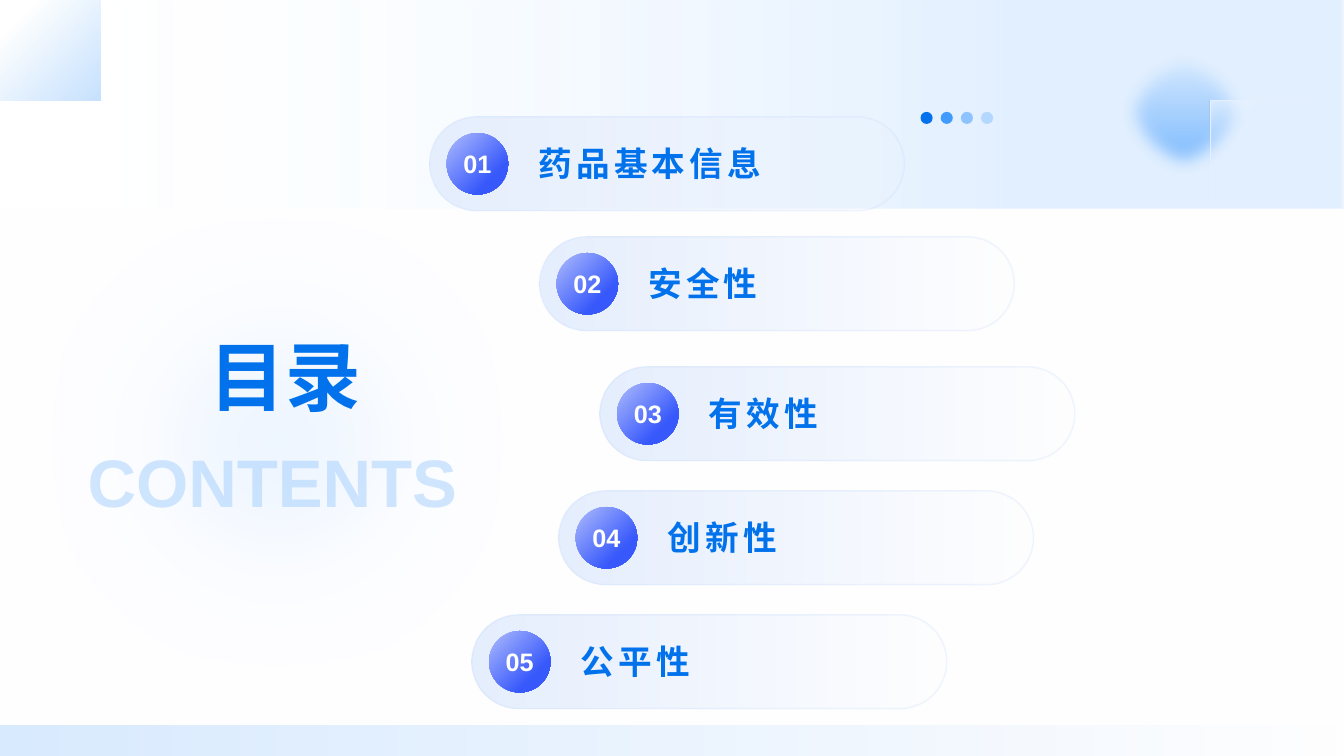
from dataclasses import dataclass

from lxml import etree
from pptx import Presentation
from pptx.dml.color import RGBColor
from pptx.enum.shapes import MSO_SHAPE
from pptx.enum.text import MSO_ANCHOR, MSO_AUTO_SIZE, PP_ALIGN
from pptx.oxml.ns import qn
from pptx.util import Inches, Pt

RECTANGLE = MSO_SHAPE.RECTANGLE
ROUNDED = MSO_SHAPE.ROUNDED_RECTANGLE
OVAL = MSO_SHAPE.OVAL
MIDDLE = MSO_ANCHOR.MIDDLE
LEFT = PP_ALIGN.LEFT
CENTER = PP_ALIGN.CENTER
NO_AUTOFIT = MSO_AUTO_SIZE.NONE

WHITE = RGBColor(0xFF, 0xFF, 0xFF)
PANEL = RGBColor(0xFE, 0xFE, 0xFF)
BLUE = RGBColor(0x02, 0x72, 0xEC)
SKY = RGBColor(0x41, 0x9B, 0xFD)
LIGHT_SKY = RGBColor(0x8D, 0xC3, 0xFE)
PALE_SKY = RGBColor(0xB3, 0xD7, 0xFE)
MIST = RGBColor(0xD9, 0xEB, 0xFF)
PILL = RGBColor(0xE6, 0xEF, 0xFE)
PILL_EDGE = RGBColor(0xB7, 0xD1, 0xFC)
LAVENDER = RGBColor(0xAF, 0xBC, 0xFD)
INDIGO = RGBColor(0x37, 0x58, 0xFB)
FONT = "Arial"

Point = tuple[float, float]


@dataclass(frozen=True)
class Stop:
    position: int
    color: RGBColor
    alpha: int = 100


@dataclass(frozen=True)
class Gradient:
    start: Stop
    end: Stop
    angle: int


@dataclass(frozen=True)
class Solid:
    color: RGBColor
    alpha: int = 100


@dataclass(frozen=True)
class Decoration:
    preset: int
    box: tuple[float, float, float, float]
    paint: Gradient | Solid
    blur: float = 0


@dataclass(frozen=True)
class Entry:
    left: float
    top: float
    label: str


BACKDROP = [
    Decoration(RECTANGLE, (0, 0, 13.33, 7.5), Gradient(Stop(0, WHITE, 0), Stop(76, SKY, 15), 0)),
    Decoration(OVAL, (11.07, 0.43, 1.34, 1.34), Gradient(Stop(0, SKY, 0), Stop(100, SKY, 70), 90), 0.17),
]
FOREGROUND = [
    Decoration(RECTANGLE, (0, 2.07, 13.33, 5.43), Solid(PANEL)),
    Decoration(RECTANGLE, (0, 7.2, 13.33, 0.3), Gradient(Stop(0, MIST, 0), Stop(100, MIST), 180)),
    *(Decoration(OVAL, (9.13 + 0.2 * index, 1.11, 0.12, 0.12), Solid(color))
      for index, color in enumerate((BLUE, SKY, LIGHT_SKY, PALE_SKY))),
    Decoration(OVAL, (-0.1, 1.53, 5.71, 5.71), Solid(MIST, 55), 1.39),
    Decoration(OVAL, (0.08, 0.68, 2.73, 2.96), Solid(MIST, 55), 1.39),
]
ENTRIES = [
    Entry(4.26, 1.16, "药品基本信息"),
    Entry(5.35, 2.35, "安全性"),
    Entry(5.95, 3.64, "有效性"),
    Entry(5.54, 4.87, "创新性"),
    Entry(4.68, 6.1, "公平性"),
]
PILL_PAINT = Gradient(Stop(0, PILL), Stop(100, PILL, 0), 0)
BADGE_PAINT = Gradient(Stop(0, LAVENDER), Stop(74, INDIGO), 45)
ARC_PAINT = Gradient(Stop(50, WHITE, 5), Stop(71, WHITE, 68), 225)
CORNER_PAINT = Gradient(Stop(20, SKY, 0), Stop(100, SKY, 30), 45)


def set_alpha(element, alphas: list[int]) -> None:
    for color, alpha in zip(element.iter(qn("a:srgbClr")), alphas):
        if alpha < 100:
            etree.SubElement(color, qn("a:alpha"), val=str(alpha * 1000))


def paint_shape(shape, paint: Gradient | Solid) -> None:
    shape.shadow.inherit = False
    shape.line.fill.background()
    if isinstance(paint, Solid):
        shape.fill.solid()
        shape.fill.fore_color.rgb = paint.color
        set_alpha(shape.element.spPr, [paint.alpha])
        return
    stops = (paint.start, paint.end)
    shape.fill.gradient()
    shape.fill.gradient_angle = (360 - paint.angle) % 360
    for target, stop in zip(shape.fill.gradient_stops, stops):
        target.position = stop.position / 100
        target.color.rgb = stop.color
    set_alpha(shape.element.spPr, [stop.alpha for stop in stops])


def outline(shape, color: RGBColor, width: float, alpha: int = 100) -> None:
    shape.line.color.rgb = color
    shape.line.width = Pt(width)
    set_alpha(shape.element.spPr.find(qn("a:ln")), [alpha])


def add_painted(shapes, item: Decoration):
    shape = shapes.add_shape(item.preset, *map(Inches, item.box))
    paint_shape(shape, item.paint)
    if item.blur:
        effects = shape.element.spPr.find(qn("a:effectLst"))
        etree.SubElement(effects, qn("a:softEdge"), rad=str(Inches(item.blur)))
    return shape


def curve(start: Point, first: Point, second: Point, end: Point, steps: int = 32) -> list[Point]:
    points = []
    for step in range(steps + 1):
        t = step / steps
        weights = ((1 - t) ** 3, 3 * t * (1 - t) ** 2, 3 * t * t * (1 - t), t ** 3)
        x, y = (sum(w * p[axis] for w, p in zip(weights, (start, first, second, end))) for axis in (0, 1))
        points.append((x, y))
    return points


def add_outline_shape(shapes, points: list[Point], paint: Gradient):
    builder = shapes.build_freeform(*points[0], scale=Inches(1))
    builder.add_line_segments(points[1:], close=True)
    shape = builder.convert_to_shape()
    paint_shape(shape, paint)
    return shape


def write(shape, text: str, size: int, color: RGBColor, alignment, wrap: bool = True, inset: bool = False) -> None:
    frame = shape.text_frame
    frame.text = text
    frame.auto_size = NO_AUTOFIT
    frame.word_wrap = wrap
    frame.vertical_anchor = MIDDLE
    if not inset:
        frame.margin_left = frame.margin_right = frame.margin_top = frame.margin_bottom = 0
    paragraph = frame.paragraphs[0]
    paragraph.alignment = alignment
    font = paragraph.runs[0].font
    font.name, font.size, font.bold = FONT, Pt(size), True
    font.color.rgb = color


def add_entry(slide, number: int, entry: Entry) -> None:
    shapes = slide.shapes.add_group_shape().shapes
    pill = add_painted(shapes, Decoration(ROUNDED, (entry.left, entry.top, 4.71, 0.93), PILL_PAINT))
    pill.adjustments[0] = 0.5
    outline(pill, PILL_EDGE, 1.09, 20)
    badge_box = (entry.left + 0.17, entry.top + 0.16, 0.61, 0.61)
    badge = add_painted(shapes, Decoration(OVAL, badge_box, BADGE_PAINT))
    write(badge, f"{number:02}", 18, WHITE, CENTER, wrap=False, inset=True)
    label = shapes.add_textbox(*map(Inches, (entry.left + 1.08, entry.top + 0.14, 3.35, 0.64)))
    write(label, entry.label, 24, BLUE, LEFT)
    label.text_frame.paragraphs[0].runs[0].font._element.set("spc", "300")


def main() -> None:
    presentation = Presentation()
    presentation.slide_width, presentation.slide_height = Inches(13.33), Inches(7.5)
    slide = presentation.slides.add_slide(presentation.slide_layouts[5])
    shapes = slide.shapes

    for item in BACKDROP:
        add_painted(shapes, item)
    arc_edge = curve((11.3, 2.03), (11.5, 1.2), (12.33, 0.58), (13.33, 0.58))
    arc = add_outline_shape(shapes, [(13.33, 2.16), (11.28, 2.16), *arc_edge], ARC_PAINT)
    outline(arc, PILL, 0.5)
    for item in FOREGROUND:
        add_painted(shapes, item)
    corner_edge = curve((0.97, 0.03), (0.88, 0.47), (0.51, 0.8), (0.06, 0.85))
    add_outline_shape(shapes, [(0, 0), (0.97, 0), *corner_edge, (0, 0.85)], CORNER_PAINT)

    title = shapes.title
    title.left, title.top, title.width, title.height = map(Inches, (2.08, 3.13, 1.92, 1.18))
    write(title, "目录", 54, BLUE, LEFT)
    shapes.element.append(title.element)

    for number, entry in enumerate(ENTRIES, start=1):
        add_entry(slide, number, entry)

    contents = shapes.add_textbox(*map(Inches, (0.87, 4.38, 3.8, 0.77)))
    write(contents, "CONTENTS", 48, LIGHT_SKY, LEFT, wrap=False)
    set_alpha(contents.text_frame.paragraphs[0].runs[0].font._element, [40])
    presentation.save("out.pptx")


if __name__ == "__main__":
    main()
